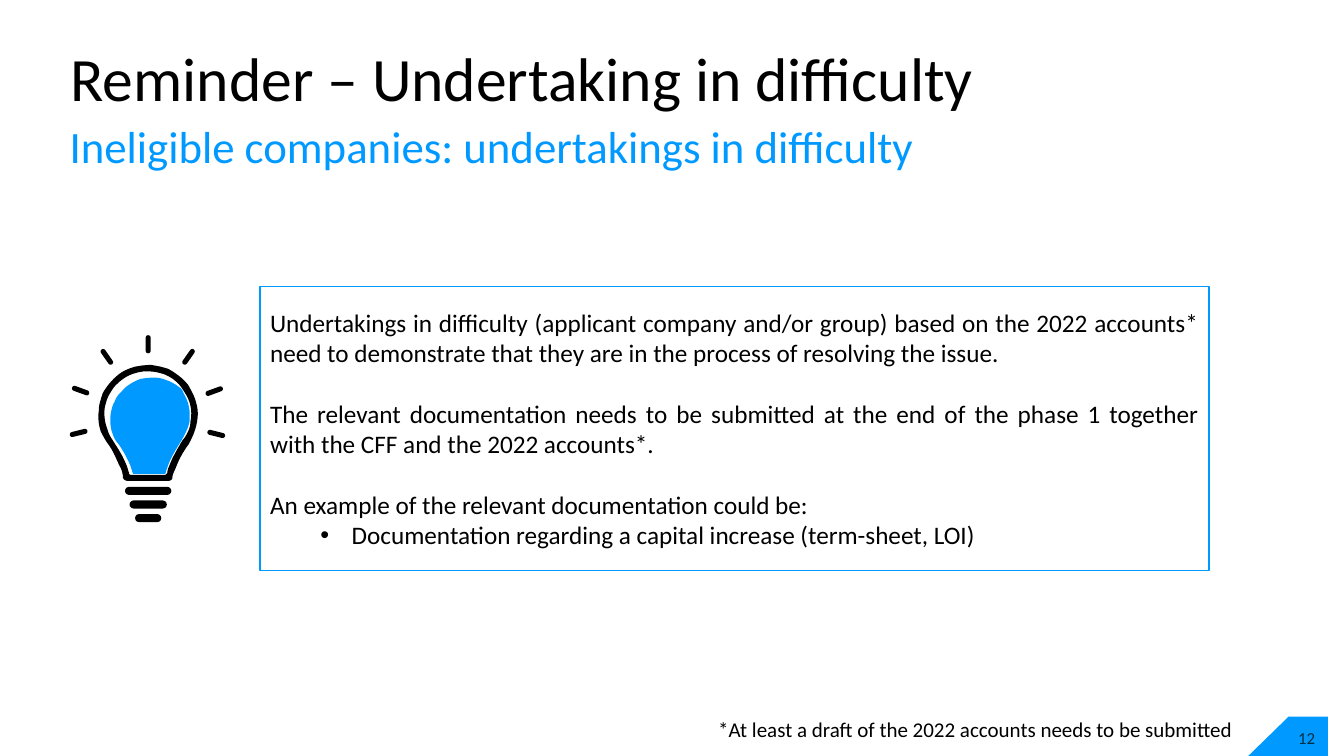
from lxml.etree import SubElement
from pptx import Presentation
from pptx.dml.color import RGBColor
from pptx.enum.shapes import MSO_SHAPE as Shape
from pptx.enum.text import MSO_ANCHOR as Anchor, MSO_AUTO_SIZE as AutoSize, PP_ALIGN as Align
from pptx.oxml.ns import qn
from pptx.util import Pt

PX = 9144  # 100 px to the inch
FINE = 10  # freeform units per px
COLOURS = {"blue": "0099FF", "black": "000000", "navy": "002F41"}
RGB = {name: RGBColor.from_string(value) for name, value in COLOURS.items()}


def write(paragraph, text, size, colour, align=Align.LEFT):
    paragraph.alignment = align
    run = paragraph.add_run()
    run.text = text
    run.font.name = "Calibri"
    run.font.size = Pt(size)
    run.font.color.rgb = RGB[colour]


def trace(start, curves, steps=8):
    """Turn a chain of cubic curves, in px, into points in fine units."""
    points = [start]
    for x1, y1, x2, y2, x3, y3 in curves:
        x0, y0 = points[-1]
        for step in range(1, steps + 1):
            t = step / steps
            weights = ((1 - t) ** 3, 3 * t * (1 - t) ** 2, 3 * t * t * (1 - t), t ** 3)
            points.append((sum(w * x for w, x in zip(weights, (x0, x1, x2, x3))),
                           sum(w * y for w, y in zip(weights, (y0, y1, y2, y3)))))
    return [(x * FINE, y * FINE) for x, y in points]


presentation = Presentation()
presentation.slide_width = 1333 * PX
presentation.slide_height = 750 * PX
slide = presentation.slides.add_slide(presentation.slide_layouts[1])
shapes = slide.shapes

# Title and subtitle
title, subtitle = shapes.title, slide.placeholders[1]
headings = [
    (title, (70, 15, 1299, 136), Anchor.MIDDLE, 0.8,
     "Reminder – Undertaking in difficulty", 44, "black"),
    (subtitle, (69, 124, 1299, 65), Anchor.TOP, 0.9,
     "Ineligible companies: undertakings in difficulty", 32, "blue"),
]
for heading, box, anchor, spacing, text, size, colour in headings:
    heading.left, heading.top, heading.width, heading.height = (n * PX for n in box)
    frame = heading.text_frame
    frame.word_wrap = True
    frame.auto_size = AutoSize.NONE
    frame.vertical_anchor = anchor
    frame.margin_left = frame.margin_right = frame.margin_top = frame.margin_bottom = 0
    paragraph = frame.paragraphs[0]
    properties = paragraph._p.get_or_add_pPr()
    properties.set("marL", "0")
    properties.set("indent", "0")
    SubElement(properties, qn("a:buNone"))
    paragraph.line_spacing = spacing
    paragraph.space_before = Pt(0)
    write(paragraph, text, size, colour)

# Framed message
message = shapes.add_shape(Shape.RECTANGLE, 258 * PX, 284 * PX, 941 * PX, 282 * PX)
message.shadow.inherit = False
message.fill.background()
message.line.color.rgb = RGB["blue"]
message.line.width = Pt(1)
frame = message.text_frame
frame.word_wrap = True
frame.vertical_anchor = Anchor.MIDDLE
frame.margin_left = frame.margin_right = 10 * PX
frame.margin_top = frame.margin_bottom = 20 * PX
statements = [
    ("Undertakings in difficulty (applicant company and/or group) based on the 2022 accounts* "
     "need to demonstrate that they are in the process of resolving the issue.", 0),
    ("The relevant documentation needs to be submitted at the end of the phase 1 together "
     "with the CFF and the 2022 accounts*.", 22),
    ("An example of the relevant documentation could be:", 22),
    ("Documentation regarding a capital increase (term-sheet, LOI)", 0),
]
for index, (text, gap) in enumerate(statements):
    paragraph = frame.add_paragraph() if index else frame.paragraphs[0]
    if index == len(statements) - 1:
        paragraph.level = 1
        properties = paragraph._p.get_or_add_pPr()
        properties.set("marL", str(81 * PX))
        properties.set("indent", str(-31 * PX))
        SubElement(properties, qn("a:buFont")).set("typeface", "Arial")
        SubElement(properties, qn("a:buChar")).set("char", "•")
    paragraph.space_before = Pt(gap)
    write(paragraph, text, 18, "black", Align.JUSTIFY)

# Light bulb: glow, glass outline and page corner
glow = trace((158, 375), [
    (151, 374, 145, 375, 139, 376), (132, 379, 126, 382, 121, 388),
    (118, 391, 115, 394, 114, 398), (112, 401, 111, 405, 110, 409),
    (109, 416, 109, 424, 112, 431), (113, 434, 115, 438, 118, 441),
    (122, 447, 126, 454, 129, 461), (130, 464, 131, 467, 132, 470),
    (143, 470, 154, 470, 164, 470), (165, 466, 166, 464, 167, 461),
    (170, 453, 175, 445, 180, 437), (184, 430, 187, 424, 188, 418),
    (189, 407, 187, 398, 182, 390), (182, 389, 181, 388, 181, 387),
    (175, 381, 167, 377, 158, 375)])
glass_outside = trace((186, 381), [
    (180, 374, 174, 370, 167, 366), (161, 364, 156, 363, 150, 362),
    (144, 362, 138, 363, 133, 364), (127, 366, 122, 368, 117, 372),
    (111, 377, 106, 383, 102, 390), (100, 396, 98, 402, 98, 408),
    (97, 415, 98, 422, 100, 428), (102, 432, 104, 436, 107, 440),
    (112, 447, 115, 454, 118, 461), (121, 466, 122, 470, 122, 474),
    (123, 476, 124, 477, 127, 477), (140, 477, 153, 477, 167, 477),
    (169, 477, 171, 476, 171, 474), (171, 472, 172, 469, 174, 465),
    (177, 457, 181, 449, 187, 441), (192, 432, 195, 424, 196, 415),
    (197, 407, 195, 399, 192, 392), (190, 388, 188, 384, 186, 381)])
glass_inside = trace((128, 469), [
    (127, 466, 126, 462, 124, 458), (121, 451, 117, 445, 112, 437),
    (110, 434, 108, 431, 107, 427), (104, 420, 103, 412, 104, 404),
    (105, 400, 106, 396, 108, 392), (110, 389, 112, 385, 115, 382),
    (121, 376, 127, 372, 135, 370), (141, 368, 148, 368, 154, 369),
    (167, 371, 177, 378, 183, 389), (189, 398, 191, 407, 189, 418),
    (189, 424, 186, 431, 181, 437), (176, 445, 171, 454, 168, 462),
    (167, 464, 166, 467, 166, 469), (165, 471, 164, 471, 164, 471),
    (153, 471, 141, 471, 130, 471), (129, 471, 128, 471, 128, 469)])
corner = [(x * FINE, y * FINE) for x, y in [(1317, 711), (1278, 711), (1238, 750), (1317, 750)]]
for outlines, colour in [([corner], "blue"), ([glow], "blue"),
                         ([glass_outside, glass_inside], "black")]:
    builder = shapes.build_freeform(*outlines[0][0], scale=PX / FINE)
    builder.add_line_segments(outlines[0][1:], close=True)
    for outline in outlines[1:]:
        builder.move_to(*outline[0])
        builder.add_line_segments(outline[1:], close=True)
    drawing = builder.convert_to_shape()
    drawing.shadow.inherit = False
    drawing.fill.solid()
    drawing.fill.fore_color.rgb = RGB[colour]
    drawing.line.fill.background()

# Bulb socket and rays: centre x, centre y, length, thickness, angle
socket = [(147, 487 + 13.5 * row, length, 8, 0) for row, length in enumerate((46, 37, 26))]
rays = [(x, y, 18, 5, angle) for x, y, angle in [
    (147, 341.5, 90), (106, 354, 55), (187, 354, -55), (80, 387.5, 20),
    (212.5, 388, -20), (78, 429.5, -14), (214.5, 430.5, 14)]]
for x, y, length, thickness, angle in socket + rays:
    bar = shapes.add_shape(Shape.ROUNDED_RECTANGLE, round((x - length / 2) * PX),
                           round((y - thickness / 2) * PX), length * PX, thickness * PX)
    bar.adjustments[0] = 0.5
    bar.rotation = angle
    bar.shadow.inherit = False
    bar.fill.solid()
    bar.fill.fore_color.rgb = RGB["black"]
    bar.line.fill.background()

# Page number and footnote
labels = [
    ((1271, 714, 50, 36), 4, Anchor.MIDDLE, "12", 12, "navy", Align.CENTER),
    ((695, 706, 537, 35), 10, Anchor.TOP,
     "*At least a draft of the 2022 accounts needs to be submitted", 15, "black", Align.RIGHT),
]
for box, margin, anchor, text, size, colour, align in labels:
    frame = shapes.add_textbox(*(n * PX for n in box)).text_frame
    frame.word_wrap = True
    frame.vertical_anchor = anchor
    frame.margin_left = frame.margin_right = margin * PX
    frame.margin_top = frame.margin_bottom = 5 * PX
    write(frame.paragraphs[0], text, size, colour, align)

presentation.save("out.pptx")
